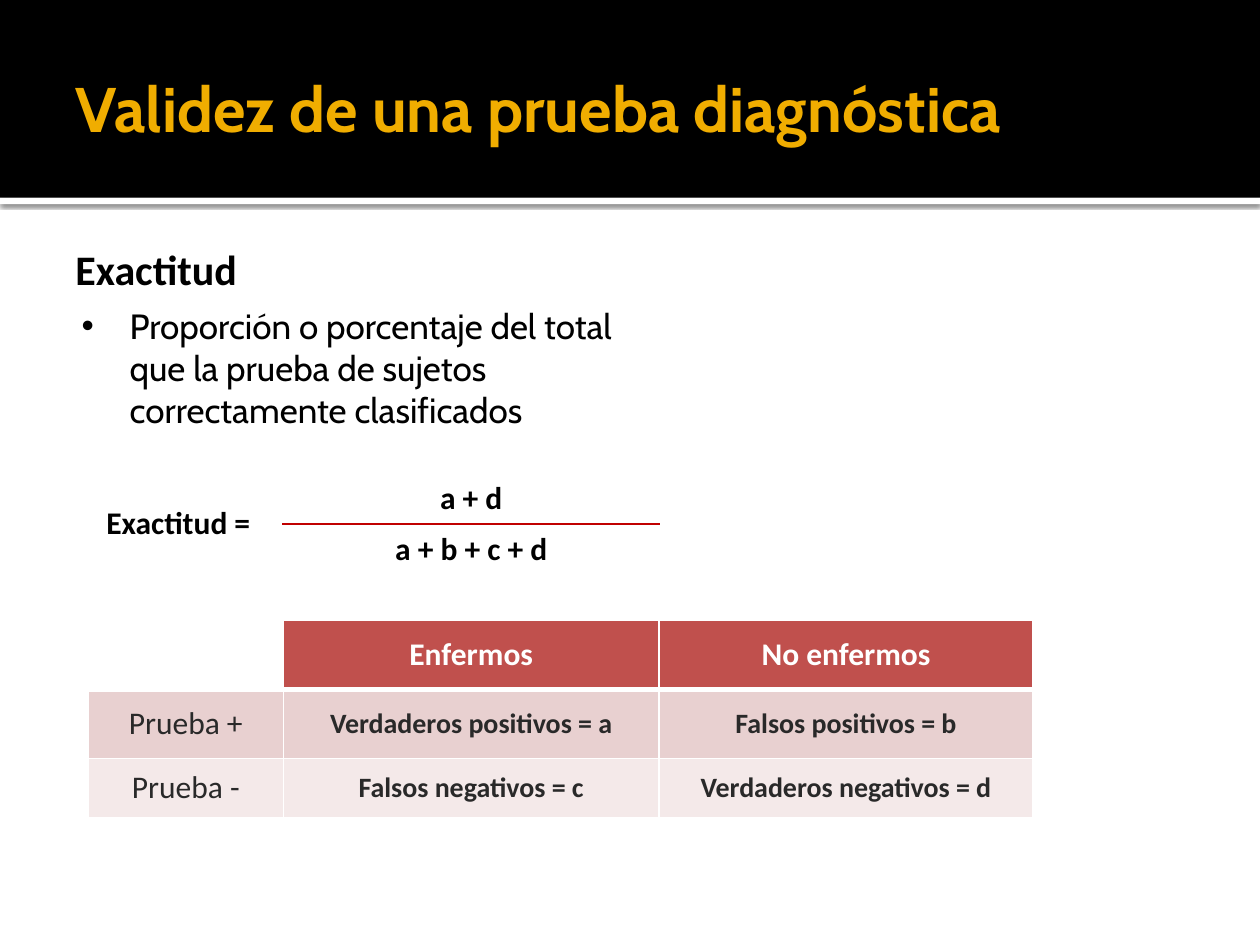
from lxml import etree
from pptx import Presentation
from pptx import util as u
from pptx.dml.color import RGBColor
from pptx.enum import shapes, text
from pptx.oxml import parse_xml
from pptx.oxml.ns import nsdecls, qn

BLACK, WHITE, GOLD = "000000", "FFFFFF", "F0AD00"
HEADER, INK, RULE = "C0504D", "292929", "C00000"
ROW_FILLS = ["E8D0D0", "F4E9E9"]
CENTER = text.PP_ALIGN.CENTER
MIDDLE = text.MSO_ANCHOR.MIDDLE


def paint(fill, color):
    fill.solid()
    fill.fore_color.rgb = RGBColor.from_string(color)


def write(para, content, size=18, font="Calibri", color=BLACK, bold=False, align=None):
    para.alignment = align
    span = para.add_run()
    span.text = content
    span.font.size = u.Pt(size)
    span.font.name = font
    span.font.bold = bold
    span.font.color.rgb = RGBColor.from_string(color)


def add_band(page, top, height, color):
    band = page.shapes.add_shape(
        shapes.MSO_SHAPE.RECTANGLE, 0, u.Inches(top), u.Inches(10), u.Inches(height))
    band.shadow.inherit = False
    paint(band.fill, color)
    band.line.fill.background()
    return band


def cast_shadow(band):
    effects = band._element.spPr.find(qn("a:effectLst"))
    effects.append(parse_xml(
        f'<a:outerShdw {nsdecls("a")} blurRad="{u.Pt(2.5)}" dist="{u.Pt(0.8)}" '
        'dir="5400000" rotWithShape="0"><a:srgbClr val="000000">'
        '<a:alpha val="60000"/></a:srgbClr></a:outerShdw>'))


def add_text(page, at, content, anchor, bullet=False, **style):
    box = page.shapes.add_textbox(*map(u.Inches, at))
    frame = box.text_frame
    frame.word_wrap = True
    frame.vertical_anchor = anchor
    para = frame.paragraphs[0]
    if bullet:
        props = para._p.get_or_add_pPr()
        props.set("marL", str(u.Inches(0.38)))
        props.set("indent", str(u.Inches(-0.38)))
        etree.SubElement(props, qn("a:buFont"), typeface="Arial")
        etree.SubElement(props, qn("a:buChar"), char="•")
    write(para, content, **style)


def add_grid(page, left, top, widths, heights):
    frame = page.shapes.add_table(
        len(heights), len(widths), u.Inches(left), u.Inches(top),
        u.Inches(sum(widths)), u.Inches(sum(heights)))
    table = frame.table
    table.first_row = table.horz_banding = False
    for column, width in zip(table.columns, widths):
        column.width = u.Inches(width)
    for row, height in zip(table.rows, heights):
        row.height = u.Inches(height)
    return table


def set_borders(cell, **borders):
    props = cell._tc.get_or_add_tcPr()
    for side in "LRTB":
        color, width = borders.get(side, (None, 1))
        paint_xml = f'<a:solidFill><a:srgbClr val="{color}"/></a:solidFill>' if color else "<a:noFill/>"
        props.append(parse_xml(
            f'<a:ln{side} {nsdecls("a")} w="{u.Pt(width)}">{paint_xml}</a:ln{side}>'))


def fill_cell(cell, content, fill=None, borders=None, **style):
    set_borders(cell, **(borders or {}))
    if fill:
        paint(cell.fill, fill)
    else:
        cell.fill.background()
    cell.vertical_anchor = MIDDLE
    if content:
        write(cell.text_frame.paragraphs[0], content, align=CENTER, **style)


def add_results(page):
    rows = [
        ["", "Enfermos", "No enfermos"],
        ["Prueba +", "Verdaderos positivos = a", "Falsos positivos = b"],
        ["Prueba -", "Falsos negativos = c", "Verdaderos negativos = d"],
    ]
    table = add_grid(page, 0.7, 4.92, [1.55, 2.98, 2.97], [0.55, 0.55, 0.47])
    thin, thick = (WHITE, 1), (WHITE, 3)
    for r, row in enumerate(rows):
        borders = {"L": thin, "R": thin, "T": thick if r == 1 else thin,
                   "B": thick if r == 0 else thin}
        for c, content in enumerate(row):
            if r == 0:
                fill, color = (HEADER if c else WHITE), WHITE
            else:
                fill, color = ROW_FILLS[r - 1], INK
            fill_cell(table.cell(r, c), content, fill, borders, color=color,
                      size=16 if r and c else 18, bold=r == 0 or c > 0)


def add_formula(page):
    table = add_grid(page, 0.59, 3.75, [1.65, 3], [0.41, 0.4])
    table.cell(0, 0).merge(table.cell(1, 0))
    rule = (RULE, 1.5)
    fill_cell(table.cell(0, 0), "Exactitud =", bold=True)
    fill_cell(table.cell(1, 0), "")
    fill_cell(table.cell(0, 1), "a + d", borders={"B": rule}, bold=True)
    fill_cell(table.cell(1, 1), "a + b + c + d", borders={"T": rule}, bold=True)


def main():
    deck = Presentation()
    deck.slide_width, deck.slide_height = u.Inches(10), u.Inches(7.5)
    page = deck.slides.add_slide(deck.slide_layouts[6])
    cast_shadow(add_band(page, 1.57, 0.05, WHITE))
    add_band(page, 0, 1.57, BLACK)
    add_text(page, (0.5, 0.17, 9, 1.37), "Validez de una prueba diagnóstica", MIDDLE,
             size=36, font="Cabin", color=GOLD, bold=True)
    add_text(page, (0.5, 1.68, 4.42, 0.7), "Exactitud", text.MSO_ANCHOR.BOTTOM,
             size=24, bold=True)
    add_results(page)
    add_text(page, (0.55, 2.37, 4.42, 4.32),
             "Proporción o porcentaje del total que la prueba de sujetos "
             "correctamente clasificados",
             text.MSO_ANCHOR.TOP, bullet=True, size=20, font="Cabin")
    add_formula(page)
    deck.save("out.pptx")


if __name__ == "__main__":
    main()
